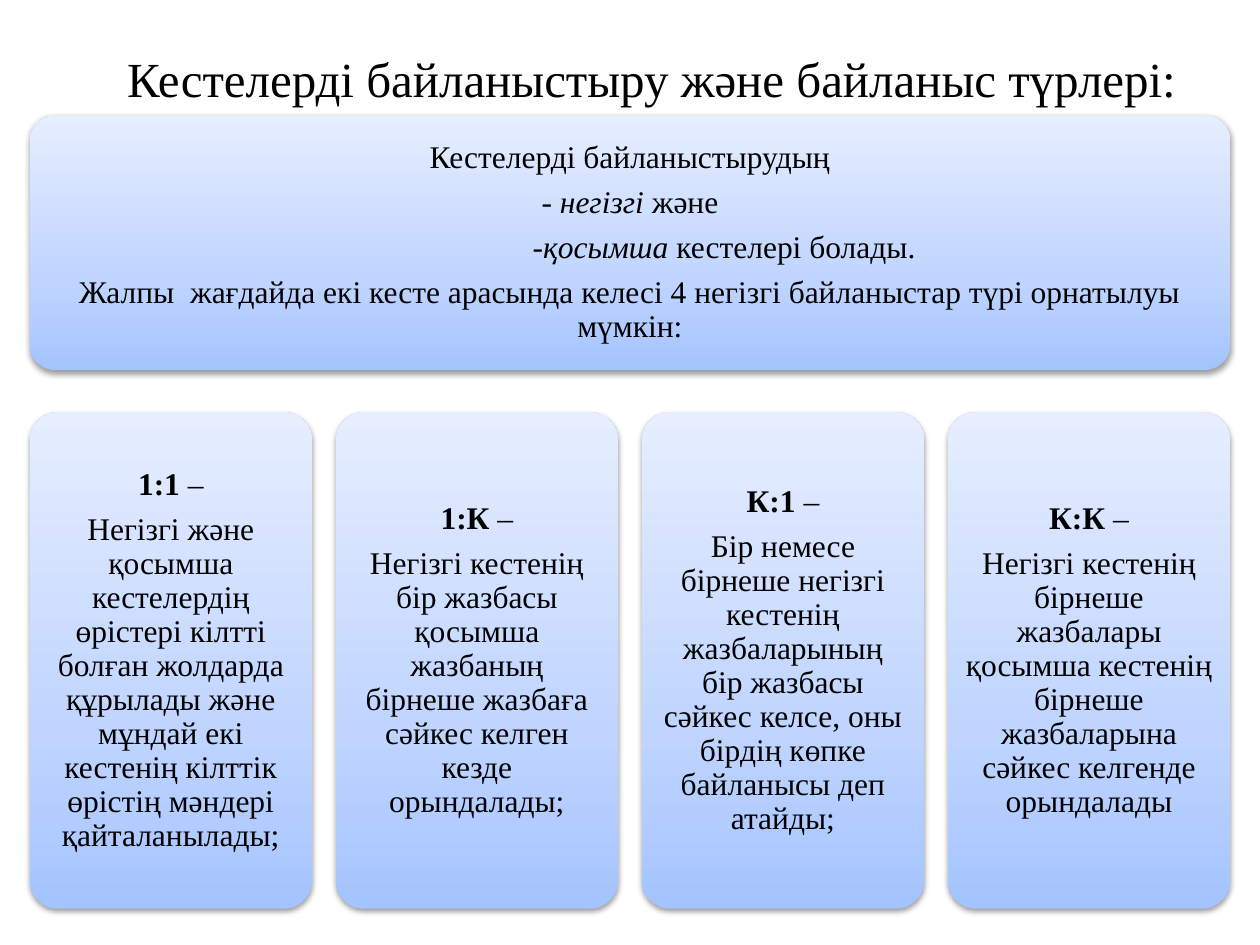
from dataclasses import dataclass

from pptx import Presentation
from pptx.dml.color import RGBColor
from pptx.enum.shapes import MSO_SHAPE
from pptx.enum.text import MSO_ANCHOR, MSO_AUTO_SIZE, PP_ALIGN
from pptx.oxml import parse_xml
from pptx.oxml.ns import nsdecls, qn
from pptx.util import Cm, Pt

FONT = "Times New Roman"
BLACK = "000000"
STOPS = ((0, "A4C4FF"), (35, "BFD4FF"), (100, "E6EEFF"))
LEFT, GAP = 0.6, 0.48
CARD_W, CARD_H = 5.69, 10.01
CARD_TOP = 8.31


@dataclass
class Run:
    text: str
    bold: bool = False
    italic: bool = False


@dataclass
class Line:
    runs: list[Run]
    indent: float = 0


@dataclass
class Panel:
    left: float
    top: float
    width: float
    height: float
    lines: list[Line]


INTRO = [
    Line([Run("Кестелерді байланыстырудың")]),
    Line([Run("- "), Run("негізгі ", italic=True), Run("және")]),
    Line([Run("-қосымша ", italic=True), Run("кестелері болады.")], indent=3.8),
    Line([Run("Жалпы  жағдайда екі кесте арасында келесі 4 негізгі "
              "байланыстар түрі орнатылуы мүмкін:")]),
]
KINDS = [
    ("1:1", "Негізгі және қосымша кестелердің өрістері кілтті болған жолдарда "
            "құрылады және мұндай екі кестенің кілттік өрістің мәндері "
            "қайталанылады;"),
    ("1:К", "Негізгі кестенің бір жазбасы қосымша жазбаның бірнеше жазбаға "
            "сәйкес келген кезде орындалады;"),
    ("К:1", "Бір немесе бірнеше негізгі кестенің жазбаларының бір жазбасы "
            "сәйкес келсе, оны бірдің көпке байланысы деп атайды;"),
    ("К:К", "Негізгі кестенің бірнеше жазбалары қосымша кестенің бірнеше "
            "жазбаларына сәйкес келгенде орындалады"),
]


def color(code: str) -> RGBColor:
    return RGBColor.from_string(code)


def put(para, text: str, *, size: float = 18, bold: bool = False,
        italic: bool = False, code: str = BLACK) -> None:
    """Append a formatted run to a paragraph."""
    run = para.add_run()
    run.text = text
    font = run.font
    font.name, font.size = FONT, Pt(size)
    font.bold, font.italic = bold, italic
    font.color.rgb = color(code)


def shade(shape) -> None:
    """Give a shape the blue gradient and a soft shadow below it."""
    shape.line.fill.background()
    shape.shadow.inherit = False
    props = shape._element.spPr
    stops = "".join(f'<a:gs pos="{pos * 1000}"><a:srgbClr val="{code}"/></a:gs>'
                    for pos, code in STOPS)
    props.find(qn("a:prstGeom")).addnext(parse_xml(
        f'<a:gradFill {nsdecls("a")} rotWithShape="1"><a:gsLst>{stops}</a:gsLst>'
        '<a:lin ang="16200000" scaled="0"/></a:gradFill>'))
    props.find(qn("a:effectLst")).append(parse_xml(
        f'<a:outerShdw {nsdecls("a")} blurRad="{Pt(3.1)}" dist="{Pt(1.6)}" '
        'dir="5400000" rotWithShape="0"><a:srgbClr val="000000">'
        '<a:alpha val="38000"/></a:srgbClr></a:outerShdw>'))


def draw(slide, panel: Panel) -> None:
    shape = slide.shapes.add_shape(
        MSO_SHAPE.ROUNDED_RECTANGLE, Cm(panel.left), Cm(panel.top),
        Cm(panel.width), Cm(panel.height))
    shape.adjustments[0] = 0.1
    shade(shape)
    frame = shape.text_frame
    frame.word_wrap = True
    frame.vertical_anchor = MSO_ANCHOR.MIDDLE
    frame.margin_left = frame.margin_right = Cm(0.18)
    frame.margin_top = frame.margin_bottom = Cm(0.18)
    for num, line in enumerate(panel.lines):
        para = frame.add_paragraph() if num else frame.paragraphs[0]
        para.alignment = PP_ALIGN.CENTER
        para.line_spacing = 0.9
        para.space_after = Pt(6.3)
        if line.indent:
            para._p.get_or_add_pPr().set("marL", str(Cm(line.indent)))
        for run in line.runs:
            put(para, run.text, bold=run.bold, italic=run.italic)


def head(slide, text: str) -> None:
    title = slide.shapes.title
    title.left, title.top = Cm(1.3), Cm(0.58)
    title.width, title.height = Cm(23.39), Cm(2.82)
    frame = title.text_frame
    frame.word_wrap = True
    frame.auto_size = MSO_AUTO_SIZE.NONE
    frame.vertical_anchor = MSO_ANCHOR.TOP
    frame.margin_left, frame.margin_right = Cm(0.53), Cm(0.25)
    frame.margin_top = Cm(0.4)
    para = frame.paragraphs[0]
    para.alignment = PP_ALIGN.CENTER
    put(para, text, size=28)


def main() -> None:
    deck = Presentation()
    deck.slide_width, deck.slide_height = Cm(25.4), Cm(19.05)
    slide = deck.slides.add_slide(deck.slide_layouts[5])
    head(slide, "Кестелерді байланыстыру және байланыс түрлері:")
    wide = len(KINDS) * CARD_W + (len(KINDS) - 1) * GAP
    draw(slide, Panel(LEFT, 2.33, wide, 5.13, INTRO))
    for num, (name, text) in enumerate(KINDS):
        lines = [Line([Run(name, bold=True), Run(" –")]), Line([Run(text)])]
        left = LEFT + num * (CARD_W + GAP)
        draw(slide, Panel(left, CARD_TOP, CARD_W, CARD_H, lines))
    deck.save("out.pptx")


if __name__ == "__main__":
    main()
